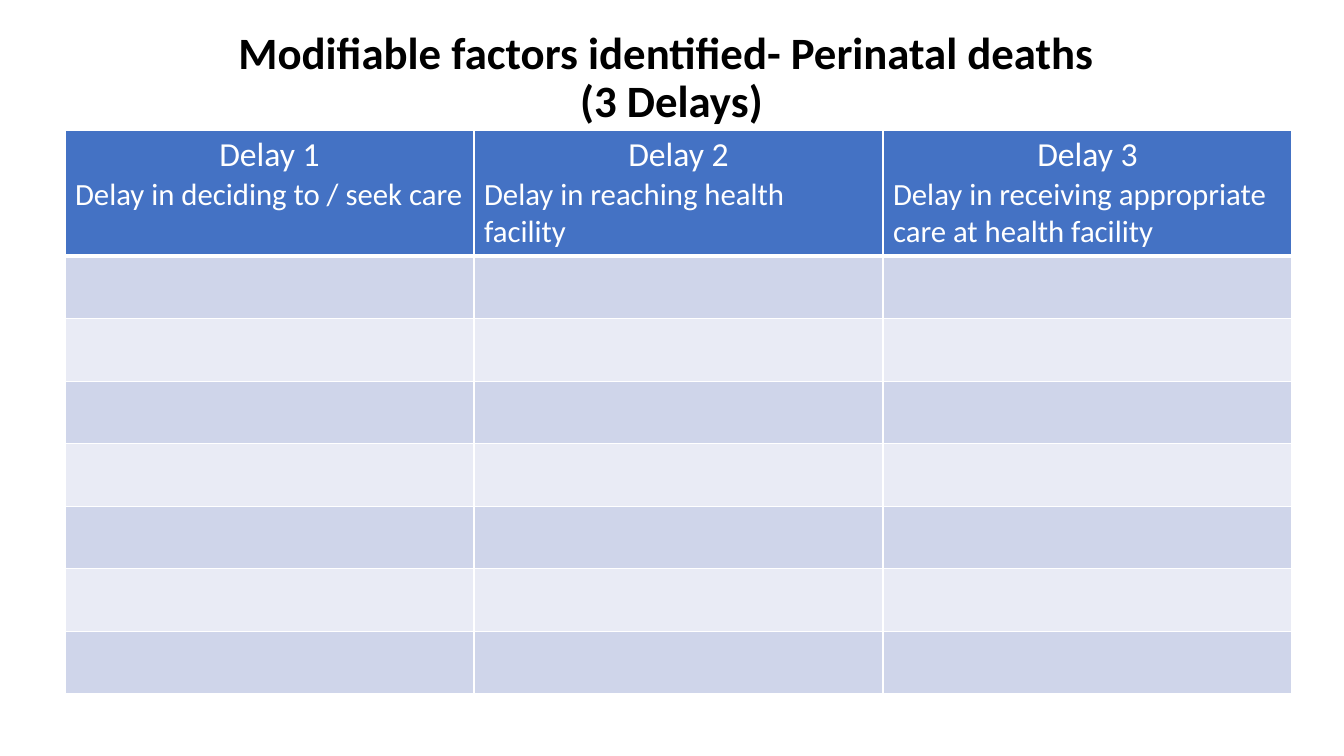
"""Build the perinatal deaths slide with its table of three delays."""
from lxml import etree
from pptx import Presentation
from pptx.dml.color import RGBColor
from pptx.enum.text import MSO_ANCHOR, PP_ALIGN
from pptx.oxml.ns import qn
from pptx.util import Pt

CENTER, LEFT = PP_ALIGN.CENTER, PP_ALIGN.LEFT
MIDDLE = MSO_ANCHOR.MIDDLE
EMU_PER_PX = 914400 / 100.8
COLORS = {
    "title": "000000",
    "white": "FFFFFF",
    "header": "4472C4",
    "odd": "CFD5EA",
    "even": "E9EBF5",
}
DELAYS = [
    ("Delay 1", "Delay in deciding to / seek care"),
    ("Delay 2", "Delay in reaching health facility"),
    ("Delay 3", "Delay in receiving appropriate care at health facility"),
]
BODY_ROWS = 7


def px(length):
    """Turn pixels into EMU."""
    return round(length * EMU_PER_PX)


class SlideBuilder:
    """Holds the style and the current slide."""

    def __init__(self, slide, font="Calibri"):
        self.slide = slide
        self.font = font

    def fill_paragraph(self, paragraph, text, alignment, color, **formats):
        """Fill a paragraph with formatted text."""
        paragraph.text = text
        paragraph.alignment = alignment
        for run in paragraph.runs:
            for name, value in {"name": self.font, **formats}.items():
                setattr(run.font, name, value)
            run.font.color.rgb = RGBColor.from_string(COLORS[color])

    def title(self, text, left, top, width, height):
        """Add the centred bold title."""
        box = self.slide.shapes.add_textbox(px(left), px(top), px(width), px(height))
        frame = box.text_frame
        frame.word_wrap = True
        frame.vertical_anchor = MIDDLE
        paragraph = frame.paragraphs[0]
        paragraph.line_spacing = 0.9
        self.fill_paragraph(paragraph, text, CENTER, "title", size=Pt(32), bold=True)

    def style_cell(self, cell, fill, bottom=1):
        """Give a cell white borders and a solid fill."""
        properties = cell._tc.get_or_add_tcPr()
        widths = {"a:lnL": 1, "a:lnR": 1, "a:lnT": 1, "a:lnB": bottom}
        for side, width in widths.items():
            line = etree.SubElement(properties, qn(side), w=str(Pt(width)))
            solid = etree.SubElement(line, qn("a:solidFill"))
            etree.SubElement(solid, qn("a:srgbClr"), val=COLORS["white"])
        cell.fill.solid()
        cell.fill.fore_color.rgb = RGBColor.from_string(COLORS[fill])

    def delay_table(self, delays, body_rows, left, top, width, header, body):
        """Add the table with a header per delay and banded empty rows."""
        frame = self.slide.shapes.add_table(
            body_rows + 1, len(delays), px(left), px(top), px(width), px(header + body)
        )
        table = frame.table
        table.horz_banding = False
        for index, row in enumerate(table.rows):
            row.height = px(body / body_rows) if index else px(header)
            for cell in row.cells:
                if index:
                    self.style_cell(cell, "odd" if index % 2 else "even")
                else:
                    self.style_cell(cell, "header", bottom=3)
        for cell, (name, meaning) in zip(table.rows[0].cells, delays):
            text = cell.text_frame
            self.fill_paragraph(text.paragraphs[0], name, CENTER, "white",
                                size=Pt(24), bold=False)
            self.fill_paragraph(text.add_paragraph(), meaning, LEFT, "white",
                                size=Pt(22), bold=False)


def main():
    """Create and save the presentation."""
    presentation = Presentation()
    presentation.slide_width, presentation.slide_height = px(1344), px(756)
    slide = presentation.slides.add_slide(presentation.slide_layouts[6])
    builder = SlideBuilder(slide)
    builder.title("Modifiable factors identified- Perinatal deaths \v(3 Delays)",
                  92, 6, 1159, 146)
    builder.delay_table(DELAYS, BODY_ROWS, 65, 130, 1227, header=126, body=438)
    presentation.save("out.pptx")


if __name__ == "__main__":
    main()
